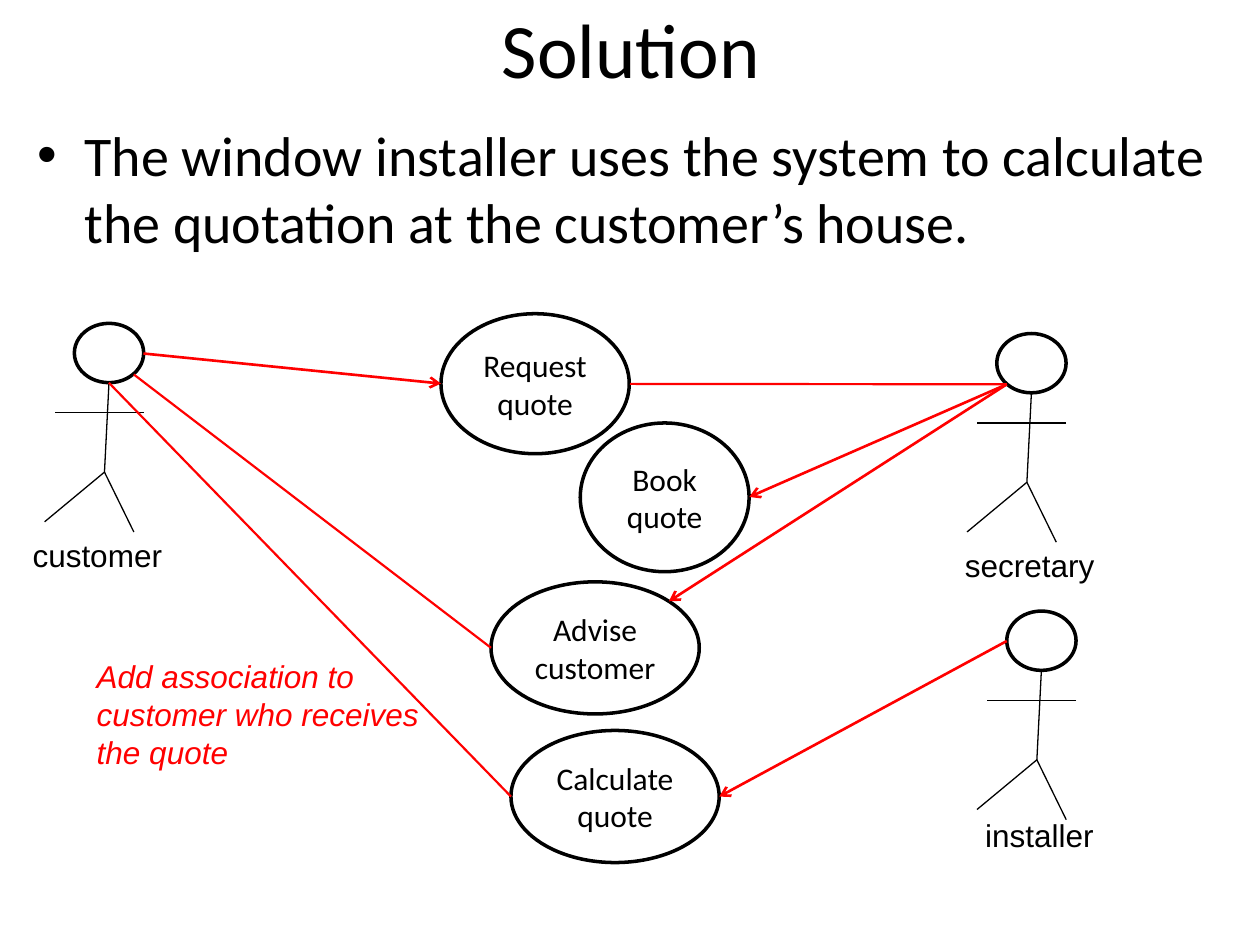
from dataclasses import dataclass

from lxml import etree
from pptx import Presentation
from pptx.dml.color import RGBColor
from pptx.enum import shapes, text
from pptx.oxml import ns
from pptx.util import Pt

BLACK, RED = "000000", "FF0000"


@dataclass
class Actor:
    name: str
    x: float  # left of the head
    y: float  # top of the head
    dx: float  # label offset from the head
    dy: float = 118


@dataclass
class Case:
    name: str
    x: float
    y: float
    w: float
    h: float


@dataclass
class Link:
    x1: float
    y1: float
    x2: float
    y2: float
    arrow: bool = False


ACTORS = [
    Actor("customer", 42.5, 184.8, -31),
    Actor("secretary", 569.6, 190.6, -25.3),
    Actor("installer", 575.3, 349.2, -19.5, 113.8),
]

CASES = [
    Case("Request quote", 252, 179.3, 107.6, 80),
    Case("Book quote", 331.6, 241.7, 96.5, 85),
    Case("Advise customer", 280.6, 332.5, 119, 75.5),
    Case("Calculate quote", 292, 417.4, 119, 75.5),
]

LINKS = [
    Link(82, 202, 252, 219.2, True),
    Link(360, 219.4, 575.3, 219.6),
    Link(575.3, 219.6, 428.2, 284, True),
    Link(575.3, 219.6, 382.3, 343.6, True),
    Link(76.5, 214, 280.6, 370.2),
    Link(575.3, 366.3, 411, 455.2, True),
    Link(62.2, 218.7, 292, 455.2),
]

# Limbs of a stick figure, measured from the head's top left
LIMBS = [
    Link(19.8, 33.9, 17.2, 85),
    Link(39.6, 51.1, -11.3, 51.1),
    Link(17.2, 85, -17, 113.4),
    Link(17.2, 85, 34, 119.2),
]


def color(code: str) -> RGBColor:
    return RGBColor.from_string(code)


def style(frame, size: float, font: str, code: str = BLACK, italic: bool = False) -> None:
    for par in frame.paragraphs:
        for run in par.runs:
            run.font.size = Pt(size)
            run.font.name = font
            run.font.italic = italic
            run.font.color.rgb = color(code)


def label(slide, words: str, x: float, y: float, w: float, h: float):
    frame = slide.shapes.add_textbox(Pt(x), Pt(y), Pt(w), Pt(h)).text_frame
    frame.word_wrap = True
    frame.text = words
    return frame


def oval(slide, x: float, y: float, w: float, h: float):
    shape = slide.shapes.add_shape(
        shapes.MSO_SHAPE.OVAL, Pt(x), Pt(y), Pt(w), Pt(h))
    shape.shadow.inherit = False
    shape.fill.background()
    shape.line.color.rgb = color(BLACK)
    shape.line.width = Pt(2)
    return shape


def line(slide, link: Link, code: str, width: float, x: float = 0, y: float = 0) -> None:
    wire = slide.shapes.add_connector(
        shapes.MSO_CONNECTOR.STRAIGHT,
        Pt(x + link.x1), Pt(y + link.y1), Pt(x + link.x2), Pt(y + link.y2))
    wire.line.color.rgb = color(code)
    wire.line.width = Pt(width)
    if link.arrow:
        etree.SubElement(wire.line._get_or_add_ln(), ns.qn("a:tailEnd"), type="arrow")
    etree.SubElement(wire._element.spPr, ns.qn("a:effectLst"))


def draw_actor(slide, actor: Actor) -> None:
    oval(slide, actor.x, actor.y, 39.6, 33.9)
    for limb in LIMBS:
        line(slide, limb, BLACK, 0.75, actor.x, actor.y)
    frame = label(slide, actor.name, actor.x + actor.dx, actor.y + actor.dy, 104.4, 29)
    style(frame, 18, "Arial")


def draw_case(slide, case: Case) -> None:
    frame = oval(slide, case.x, case.y, case.w, case.h).text_frame
    frame.word_wrap = True
    frame.text = case.name
    frame.vertical_anchor = text.MSO_ANCHOR.MIDDLE
    frame.paragraphs[0].alignment = text.PP_ALIGN.CENTER
    style(frame, 18, "Calibri")


def bullet(par) -> None:
    par.space_before = Pt(6.4)
    props = par._p.get_or_add_pPr()
    props.set("marL", str(Pt(27)))
    props.set("indent", str(-Pt(27)))
    etree.SubElement(props, ns.qn("a:buFont"), typeface="Arial")
    etree.SubElement(props, ns.qn("a:buChar"), char="•")


def main() -> None:
    deck = Presentation()
    deck.slide_width, deck.slide_height = Pt(720), Pt(540)
    slide = deck.slides.add_slide(deck.slide_layouts[6])

    # Title and statement
    title = label(slide, "Solution", 36.5, 0, 648, 55)
    title.vertical_anchor = text.MSO_ANCHOR.MIDDLE
    title.paragraphs[0].alignment = text.PP_ALIGN.CENTER
    style(title, 44, "Calibri")
    body = label(
        slide,
        "The window installer uses the system to calculate the quotation "
        "at the customer’s house.",
        14.2, 65.2, 692, 79)
    bullet(body.paragraphs[0])
    style(body, 32, "Calibri")

    # Use case diagram
    for actor in ACTORS:
        draw_actor(slide, actor)
    for case in CASES:
        draw_case(slide, case)
    for link in LINKS:
        line(slide, link, RED, 1.5 if link.arrow else 1.25)

    # Comment on the added association
    note = label(slide, "Add association to customer who receives the quote",
                 48.2, 372.2, 226.8, 72)
    style(note, 18, "Arial", RED, True)

    deck.save("out.pptx")


if __name__ == "__main__":
    main()
